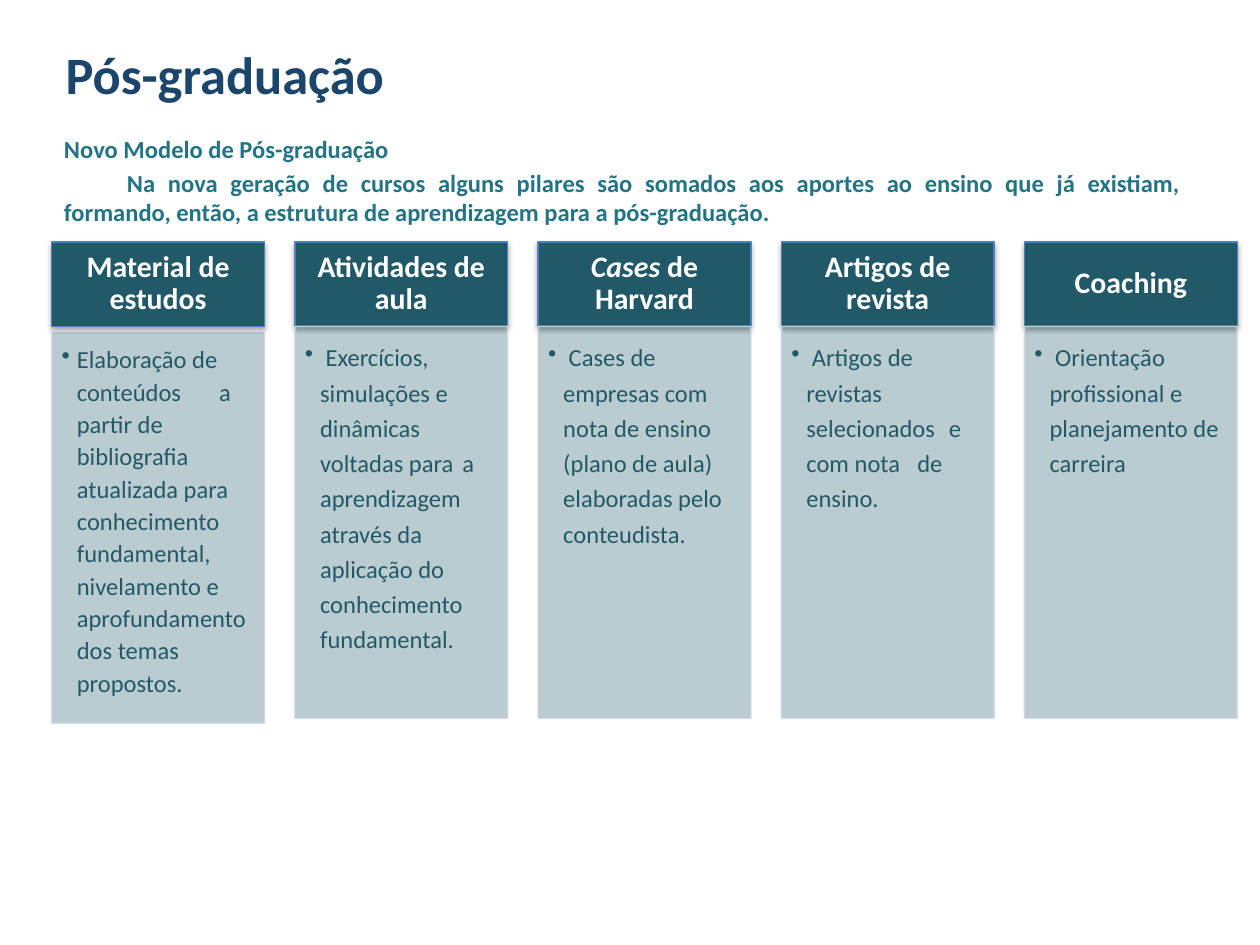
from dataclasses import dataclass

from lxml.etree import SubElement
from pptx import Presentation
from pptx.dml.color import RGBColor
from pptx.enum.shapes import MSO_SHAPE
from pptx.enum.text import MSO_ANCHOR, MSO_AUTO_SIZE, PP_ALIGN
from pptx.oxml.ns import qn
from pptx.util import Inches, Pt

COLOURS = {
    "title": "1C456B",
    "intro": "227485",
    "pillar": "215968",
    "header_line": "4F81BD",
    "body_line": "D0D8E8",
    "white": "FFFFFF",
}
FONT = "Calibri"
GRID_LEFT, COLUMN_PITCH, COLUMN_WIDTH = 0.41, 1.93, 1.69
HEADER_TOP, HEADER_HEIGHT, BODY_HEIGHT = 1.92, 0.67, 3.11
BULLET_INDENT = 0.12

TITLE_FORMAT = {"size": Pt(30), "bold": True}
INTRO_FORMAT = {"size": Pt(14), "bold": True}
HEADER_FORMAT = {"size": Pt(17), "bold": True}
BODY_FORMAT = {"size": Pt(14)}


@dataclass(frozen=True)
class Pillar:
    heading: str
    text: str
    italic_start: str = ""
    tabs: tuple[float, ...] = ()
    body_drop: float = 0
    line_spacing: float = 1.2


PILLARS = [
    Pillar(
        "Material de estudos",
        "Elaboração de conteúdos\ta partir de bibliografia atualizada para conhecimento "
        "fundamental, nivelamento e aprofundamento dos temas propostos.",
        tabs=(1.25,), body_drop=0.04, line_spacing=1.1,
    ),
    Pillar(
        "Atividades de aula",
        " Exercícios, simulações e dinâmicas voltadas para\ta aprendizagem através da "
        "aplicação do conhecimento fundamental.",
        tabs=(1.25,),
    ),
    Pillar(
        " de Harvard",
        " Cases de empresas com nota de ensino (plano de aula) elaboradas pelo conteudista.",
        italic_start="Cases",
    ),
    Pillar(
        "Artigos de revista",
        " Artigos de revistas selecionados\te com nota\tde ensino.",
        tabs=(1.0, 1.25),
    ),
    Pillar("Coaching", " Orientação profissional e planejamento de carreira"),
]


def add_span(para, text: str, colour: str, values: dict) -> None:
    span = para.add_run()
    span.text = text
    span.font.name = FONT
    span.font.color.rgb = RGBColor.from_string(COLOURS[colour])
    for name, value in values.items():
        setattr(span.font, name, value)


def set_insets(frame, left: float, top: float, right: float, bottom: float) -> None:
    insets = {"left": left, "top": top, "right": right, "bottom": bottom}
    for side, inset in insets.items():
        setattr(frame, f"margin_{side}", Inches(inset))


def add_panel(page, left: float, top: float, height: float, line: str):
    panel = page.shapes.add_shape(
        MSO_SHAPE.RECTANGLE, Inches(left), Inches(top), Inches(COLUMN_WIDTH), Inches(height)
    )
    panel.shadow.inherit = False
    panel.fill.solid()
    panel.fill.fore_color.rgb = RGBColor.from_string(COLOURS["pillar"])
    panel.line.color.rgb = RGBColor.from_string(COLOURS[line])
    panel.line.width = Pt(0.75)
    panel.text_frame.word_wrap = True
    return panel


def add_alpha(colour, percent: int) -> None:
    SubElement(colour, qn("a:alpha"), val=str(percent * 1000))


def add_shadow(panel) -> None:
    effects = panel._element.spPr.find(qn("a:effectLst"))
    shadow = SubElement(
        effects, qn("a:outerShdw"), blurRad=str(Pt(3.1)), dist=str(Pt(1.8)),
        dir="5400000", rotWithShape="0",
    )
    add_alpha(SubElement(shadow, qn("a:srgbClr"), val="000000"), 35)


def add_bullet(para, tabs: tuple[float, ...]) -> None:
    properties = para._p.get_or_add_pPr()
    properties.set("marL", str(Inches(BULLET_INDENT)))
    properties.set("indent", str(Inches(-BULLET_INDENT)))
    SubElement(properties, qn("a:buChar"), char="•")
    if tabs:
        stops = SubElement(properties, qn("a:tabLst"))
        for position in tabs:
            SubElement(stops, qn("a:tab"), pos=str(Inches(position)), algn="l")


def draw_header(page, pillar: Pillar, left: float) -> None:
    header = add_panel(page, left, HEADER_TOP, HEADER_HEIGHT, "header_line")
    add_shadow(header)
    frame = header.text_frame
    frame.vertical_anchor = MSO_ANCHOR.MIDDLE
    set_insets(frame, 0.13, 0.08, 0.13, 0.08)
    para = frame.paragraphs[0]
    para.alignment = PP_ALIGN.CENTER
    para.line_spacing = 0.9
    if pillar.italic_start:
        add_span(para, pillar.italic_start, "white", HEADER_FORMAT | {"italic": True})
    add_span(para, pillar.heading, "white", HEADER_FORMAT)


def draw_body(page, pillar: Pillar, left: float) -> None:
    top = HEADER_TOP + HEADER_HEIGHT + pillar.body_drop
    body = add_panel(page, left, top, BODY_HEIGHT, "body_line")
    fill_colour, line_colour = body._element.spPr.iter(qn("a:srgbClr"))
    add_alpha(fill_colour, 30)
    add_alpha(line_colour, 90)
    frame = body.text_frame
    frame.vertical_anchor = MSO_ANCHOR.TOP
    set_insets(frame, 0.08, 0.08, 0.11, 0.12)
    para = frame.paragraphs[0]
    add_bullet(para, pillar.tabs)
    para.alignment = PP_ALIGN.LEFT
    para.line_spacing = pillar.line_spacing
    add_span(para, pillar.text, "pillar", BODY_FORMAT)


def draw_intro(page) -> None:
    box = page.shapes.add_textbox(Inches(GRID_LEFT), Inches(0.73), Inches(9.06), Inches(4.88))
    frame = box.text_frame
    frame.word_wrap = True
    set_insets(frame, 0.1, 0.33, 0.1, 0.05)
    subtitle, summary = frame.paragraphs[0], frame.add_paragraph()
    add_span(subtitle, "Novo Modelo de Pós-graduação", "intro", INTRO_FORMAT)
    add_span(
        summary,
        "Na nova geração de cursos alguns pilares são somados aos aportes ao ensino que já "
        "existiam, formando, então, a estrutura de aprendizagem para a pós-graduação.",
        "intro", INTRO_FORMAT,
    )
    for para in (subtitle, summary):
        para.alignment = PP_ALIGN.JUSTIFY
    summary.space_before = Pt(2.8)
    summary._p.get_or_add_pPr().set("indent", str(Inches(0.5)))


def draw_title(page) -> None:
    box = page.shapes.add_textbox(Inches(GRID_LEFT), Inches(0.28), Inches(2.75), Inches(0.61))
    frame = box.text_frame
    frame.word_wrap = False
    frame.auto_size = MSO_AUTO_SIZE.SHAPE_TO_FIT_TEXT
    frame.vertical_anchor = MSO_ANCHOR.MIDDLE
    para = frame.paragraphs[0]
    para.alignment = PP_ALIGN.CENTER
    add_span(para, "Pós-graduação", "title", TITLE_FORMAT)


def main() -> None:
    deck = Presentation()
    deck.slide_width, deck.slide_height = Inches(10), Inches(7.5)
    page = deck.slides.add_slide(deck.slide_layouts[6])
    draw_intro(page)
    draw_title(page)
    for column, pillar in enumerate(PILLARS):
        left = GRID_LEFT + column * COLUMN_PITCH
        draw_header(page, pillar, left)
        draw_body(page, pillar, left)
    deck.save("out.pptx")


if __name__ == "__main__":
    main()
